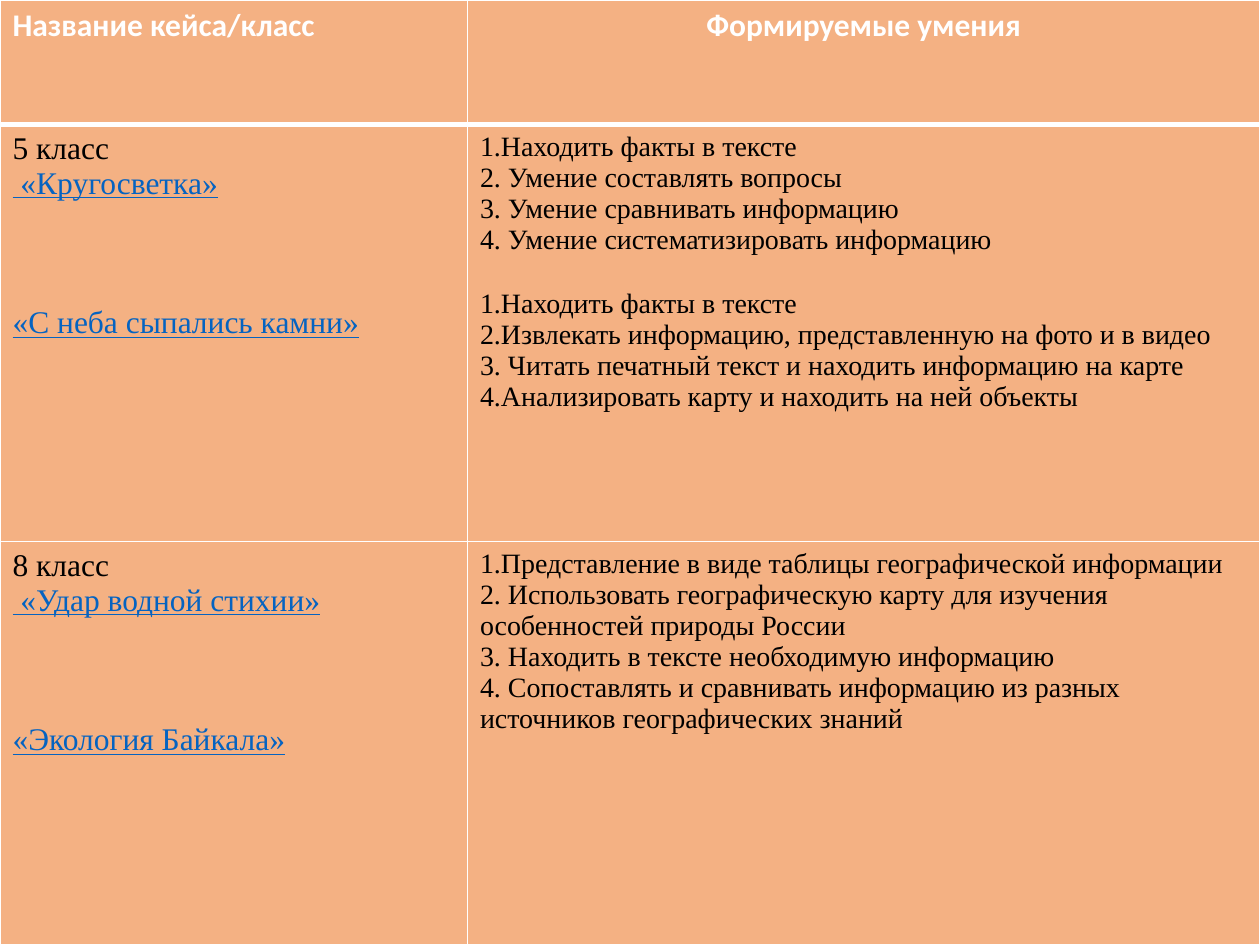
from dataclasses import dataclass

from lxml.etree import SubElement as Sub
from pptx import Presentation
from pptx.dml.color import RGBColor as Rgb
from pptx.enum.text import PP_ALIGN as Align
from pptx.oxml.ns import qn
from pptx.table import _Cell as Cell
from pptx.util import Inches, Pt

COLORS = {"fill": "F4B183", "rule": "FFFFFF", "head": "FFFFFF",
          "text": "000000", "link": "0563C1"}
COLS = [3.71, 6.29]
ROWS = [0.99, 3.31, 3.2]
THIN, THICK = 1, 3


@dataclass
class Style:
    color: str
    size: int
    font: str = "Times New Roman"
    bold: bool = False
    line: bool = False
    align: Align = Align.LEFT


@dataclass
class Line:
    text: str
    style: Style
    gap: float = 0


@dataclass
class Case:
    grade: str
    names: list[str]
    skills: list[list[str]]


HEAD = Style("head", 18, "Calibri", bold=True)
MID = Style("head", 18, "Calibri", bold=True, align=Align.CENTER)
GRADE = Style("text", 18)
LINK = Style("link", 18, line=True)
SKILL = Style("text", 16)

CASES = [
    Case("5 класс", [" «Кругосветка»", "«С неба сыпались камни»"], [
        ["1.Находить факты в тексте",
         "2. Умение составлять вопросы",
         "3. Умение сравнивать информацию",
         "4. Умение систематизировать информацию"],
        ["1.Находить факты в тексте",
         "2.Извлекать информацию, представленную на фото и в видео",
         "3. Читать печатный текст и находить информацию на карте",
         "4.Анализировать карту и находить на ней объекты"]]),
    Case("8 класс", [" «Удар водной стихии»", "«Экология Байкала»"], [
        ["1.Представление в виде таблицы географической информации",
         "2. Использовать географическую карту для изучения особенностей "
         "природы России",
         "3. Находить в тексте необходимую информацию",
         "4. Сопоставлять и сравнивать информацию из разных источников "
         "географических знаний"]]),
]


def name_lines(case: Case) -> list[Line]:
    first, last = case.names
    return [Line(case.grade, GRADE), Line(first, LINK), Line(last, LINK, 60)]


def skill_lines(case: Case) -> list[Line]:
    """Number every group apart, with a gap above each group but the first."""
    return [Line(text, SKILL, 19 if g and not i else 0)
            for g, group in enumerate(case.skills)
            for i, text in enumerate(group)]


def rule_cell(cell: Cell, top: float, base: float) -> None:
    """Draw the four borders; top and base are widths in points."""
    props = cell._tc.get_or_add_tcPr()
    for side, width in zip("LRTB", (THIN, THIN, top, base)):
        edge = Sub(props, qn(f"a:ln{side}"), w=str(Pt(width)))
        paint = Sub(edge, qn("a:solidFill"))
        Sub(paint, qn("a:srgbClr"), val=COLORS["rule"])


def fill_cell(cell: Cell, lines: list[Line]) -> None:
    cell.fill.solid()
    cell.fill.fore_color.rgb = Rgb.from_string(COLORS["fill"])
    frame = cell.text_frame
    frame.text = "\n".join(line.text for line in lines)
    for para, line in zip(frame.paragraphs, lines):
        style = line.style
        para.alignment = style.align
        para.space_before = Pt(line.gap)
        font = para.runs[0].font
        font.name, font.size = style.font, Pt(style.size)
        font.bold, font.underline = style.bold, style.line
        font.color.rgb = Rgb.from_string(COLORS[style.color])


def main() -> None:
    deck = Presentation()
    deck.slide_width, deck.slide_height = Inches(10), Inches(7.5)
    slide = deck.slides.add_slide(deck.slide_layouts[6])
    table = slide.shapes.add_table(len(ROWS), len(COLS), Inches(0), Inches(0),
                                   Inches(10), Inches(7.5)).table
    for col, width in zip(table.columns, COLS):
        col.width = Inches(width)
    for row, height in zip(table.rows, ROWS):
        row.height = Inches(height)

    grid = [[[Line("Название кейса/класс", HEAD)],
             [Line("Формируемые умения", MID)]]]
    grid += [[name_lines(case), skill_lines(case)] for case in CASES]
    for r, row in enumerate(grid):
        for c, lines in enumerate(row):
            cell = table.cell(r, c)
            rule_cell(cell, THICK if r == 1 else THIN,
                      THICK if r == 0 else THIN)
            fill_cell(cell, lines)
    deck.save("out.pptx")


if __name__ == "__main__":
    main()
